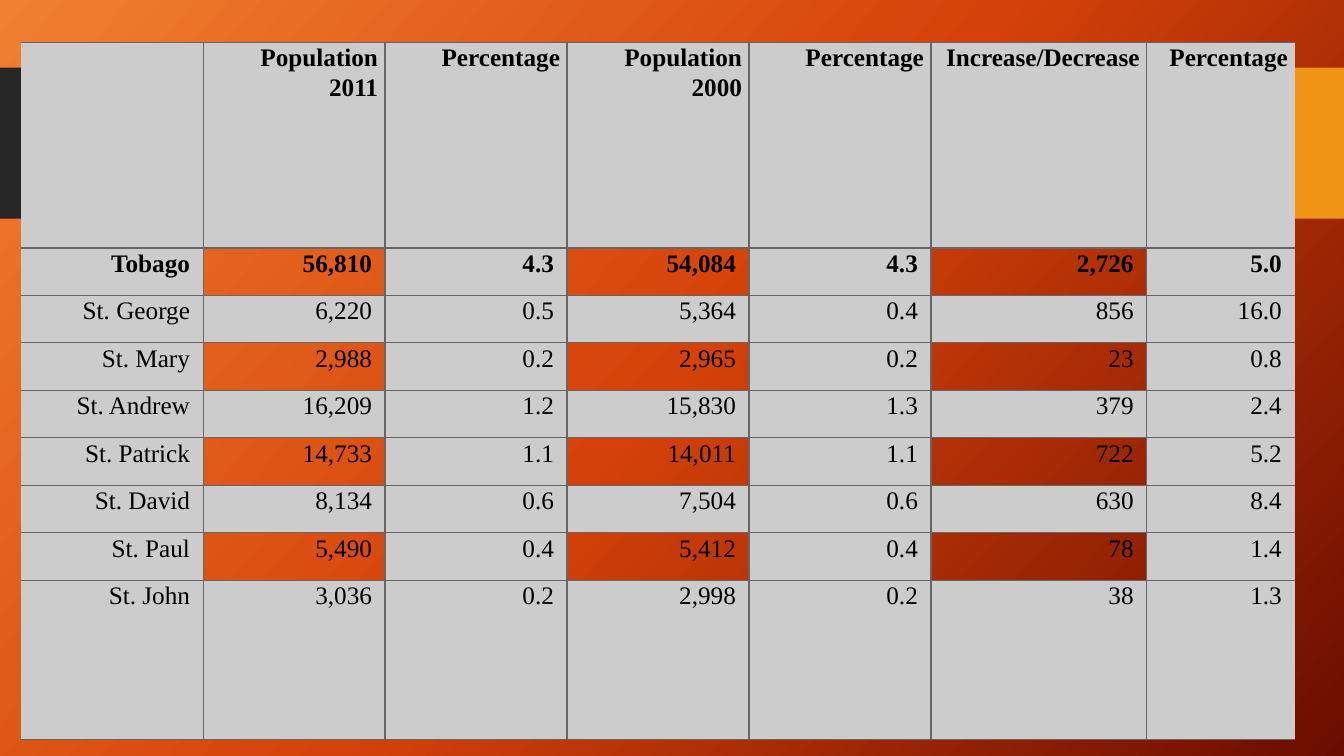
from copy import deepcopy

from lxml import etree
from pptx import Presentation
from pptx.dml.color import RGBColor
from pptx.enum.shapes import MSO_SHAPE
from pptx.enum.text import PP_ALIGN
from pptx.oxml.ns import qn
from pptx.util import Inches, Pt

RECT = MSO_SHAPE.RECTANGLE
RIGHT = PP_ALIGN.RIGHT

BLACK = RGBColor(0x00, 0x00, 0x00)
CHARCOAL = RGBColor(0x26, 0x26, 0x26)
AMBER = RGBColor(0xF0, 0x94, 0x15)
CELL_GREY = RGBColor(0xCC, 0xCC, 0xCC)
BORDER = RGBColor(0x66, 0x66, 0x66)
GRADIENT = [(0, RGBColor(0xF1, 0x80, 0x31)),
            (0.5, RGBColor(0xD5, 0x42, 0x09)),
            (1, RGBColor(0x6A, 0x0D, 0x00))]
FONT = "Times New Roman"

SLIDE_W, SLIDE_H = 13.33, 7.5
COL_WIDTHS = [1.805] * 5 + [2.14, 1.47]
ROW_HEIGHTS = [2.04] + [0.471] * 7 + [1.58]
HEADER_INSET, BODY_INSET = 0.07, 0.13

ROWS = [
    ["", "Population 2011", "Percentage", "Population 2000", "Percentage",
     "Increase/Decrease", "Percentage"],
    ["Tobago", "56,810", "4.3", "54,084", "4.3", "2,726", "5.0"],
    ["St. George", "6,220", "0.5", "5,364", "0.4", "856", "16.0"],
    ["St. Mary", "2,988", "0.2", "2,965", "0.2", "23", "0.8"],
    ["St. Andrew", "16,209", "1.2", "15,830", "1.3", "379", "2.4"],
    ["St. Patrick", "14,733", "1.1", "14,011", "1.1", "722", "5.2"],
    ["St. David", "8,134", "0.6", "7,504", "0.6", "630", "8.4"],
    ["St. Paul", "5,490", "0.4", "5,412", "0.4", "78", "1.4"],
    ["St. John", "3,036", "0.2", "2,998", "0.2", "38", "1.3"],
]


def paint_background(s):
    """Three-stop diagonal gradient."""
    fill = s.background.fill
    fill.gradient()
    fill.gradient_angle = 360 - 42
    gs_list = s.element.find(".//" + qn("a:gsLst"))
    gs_list.append(deepcopy(gs_list[-1]))
    for stop, (position, color) in zip(fill.gradient_stops, GRADIENT):
        stop.position = position
        stop.color.rgb = color


def add_band(s, left, top, width, height):
    """Title band: a dark bar, a gap and an amber tab at the right edge."""
    tab_w = 1.75
    bar_w = width - tab_w - 0.17
    for x, w, color in [(left, bar_w, CHARCOAL),
                        (left + width - tab_w, tab_w, AMBER)]:
        sp = s.shapes.add_shape(RECT, Inches(x), Inches(top),
                                Inches(w), Inches(height))
        sp.shadow.inherit = False
        sp.fill.solid()
        sp.fill.fore_color.rgb = color
        sp.line.fill.background()


def set_borders(cell, open_sides):
    """Thin grey lines on every side but the open ones."""
    tc_pr = cell._tc.get_or_add_tcPr()
    for side in ("lnL", "lnR", "lnT", "lnB"):
        ln = etree.SubElement(tc_pr, qn("a:" + side), w=str(Pt(1)))
        if side in open_sides:
            etree.SubElement(ln, qn("a:noFill"))
        else:
            solid = etree.SubElement(ln, qn("a:solidFill"))
            etree.SubElement(solid, qn("a:srgbClr"), val=str(BORDER))


def write_cell(cell, text, bold, inset):
    cell.margin_left = Inches(HEADER_INSET)
    cell.margin_right = Inches(inset)
    cell.margin_top = cell.margin_bottom = 0
    p = cell.text_frame.paragraphs[0]
    p.alignment = RIGHT
    p.line_spacing = 1.07
    if text:
        r = p.add_run()
        r.text = text
        r.font.name = FONT
        r.font.size = Pt(18)
        r.font.bold = bold
        r.font.color.rgb = BLACK


def add_population_table(s, left, top, width, height):
    frame = s.shapes.add_table(len(ROWS), len(COL_WIDTHS), Inches(left),
                               Inches(top), Inches(width), Inches(height))
    table = frame.table
    table.first_row = table.horz_banding = False
    for column, w in zip(table.columns, COL_WIDTHS):
        column.width = Inches(w)
    for row, h in zip(table.rows, ROW_HEIGHTS):
        row.height = Inches(h)

    last = len(COL_WIDTHS) - 1
    for i, values in enumerate(ROWS):
        for j, text in enumerate(values):
            cell = table.cell(i, j)
            write_cell(cell, text, i < 2, BODY_INSET if i else HEADER_INSET)
            set_borders(cell, {0: ["lnL"], last: ["lnR"]}.get(j, []))
            # Count columns let the background through on odd rows
            if i % 2 and j % 2:
                cell.fill.background()
            else:
                cell.fill.solid()
                cell.fill.fore_color.rgb = CELL_GREY


def main():
    prs = Presentation()
    prs.slide_width, prs.slide_height = Inches(SLIDE_W), Inches(SLIDE_H)
    s = prs.slides.add_slide(prs.slide_layouts[6])
    paint_background(s)
    add_band(s, 0, 0.67, SLIDE_W, 1.5)
    add_population_table(s, 0.21, 0.42, sum(COL_WIDTHS), sum(ROW_HEIGHTS))
    prs.save("out.pptx")


if __name__ == "__main__":
    main()
